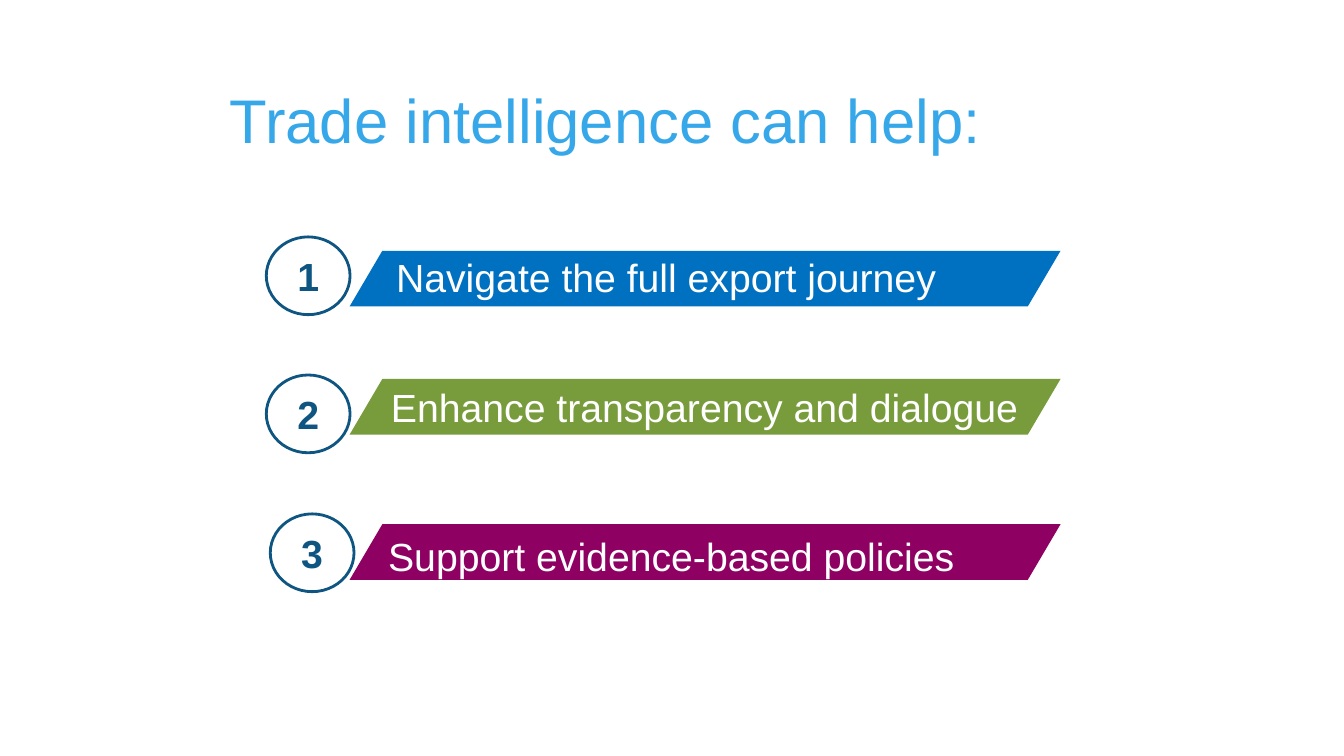
"""Build the slide listing three ways trade intelligence can help."""
from pptx import Presentation
from pptx.dml.color import RGBColor
from pptx.enum.shapes import MSO_SHAPE
from pptx.enum.text import MSO_ANCHOR, PP_ALIGN
from pptx.util import Cm, Pt

OVAL, SLANT = MSO_SHAPE.OVAL, MSO_SHAPE.PARALLELOGRAM
TOP, MIDDLE = MSO_ANCHOR.TOP, MSO_ANCHOR.MIDDLE
LEFT, CENTER = PP_ALIGN.LEFT, PP_ALIGN.CENTER
WHITE, NAVY, SKY = "FFFFFF", "0E5681", "36A7E9"


def rgb(value):
    return RGBColor.from_string(value)


class Deck:
    def __init__(self, s):
        self.s = s
        self.font = {"name": "Arial", "size": Pt(28), "bold": False}

    def put_text(self, sp, text, color, align=LEFT, anchor=TOP, **fmt):
        tf = sp.text_frame
        tf.word_wrap = True
        tf.vertical_anchor = anchor
        p = tf.paragraphs[0]
        p.alignment = align
        r = p.add_run()
        r.text = text
        for key, value in {**self.font, **fmt}.items():
            setattr(r.font, key, value)
        r.font.color.rgb = rgb(color)

    def label(self, box, text, color, **fmt):
        sp = self.s.shapes.add_textbox(*map(Cm, box))
        self.put_text(sp, text, color, **fmt)

    def bar(self, box, color):
        sp = self.s.shapes.add_shape(SLANT, *map(Cm, box))
        sp.shadow.inherit = False
        sp.adjustments[0] = 0.588
        sp.fill.solid()
        sp.fill.fore_color.rgb = rgb(color)
        sp.line.fill.background()

    def badge(self, box, number):
        sp = self.s.shapes.add_shape(OVAL, *map(Cm, box))
        sp.shadow.inherit = False
        sp.fill.background()
        sp.line.color.rgb = rgb(NAVY)
        sp.line.width = Pt(2)
        self.put_text(sp, str(number), NAVY, CENTER, MIDDLE, bold=True)


def main():
    prs = Presentation()
    prs.slide_width, prs.slide_height = Cm(33.86), Cm(19.05)
    deck = Deck(prs.slides.add_slide(prs.slide_layouts[6]))
    deck.label((5.54, 1.93, 21.89, 2.13), "Trade intelligence can help:", SKY, size=Pt(44))

    rows = [
        ("Navigate the full export journey", "0070C0", 6.32, (6.71, 5.97), (9.73, 6.27, 19.25)),
        ("Enhance transparency and dialogue", "789C3C", 9.55, (6.71, 9.45), (9.6, 9.53, 19.94)),
        ("Support evidence-based policies", "8F0063", 13.21, (6.81, 12.95), (9.53, 13.28, 17.37)),
    ]
    for number, (text, color, bar_top, badge_at, label_at) in enumerate(rows, 1):
        deck.bar((8.81, bar_top, 17.91, 1.4), color)
        deck.badge((*badge_at, 2.11, 1.96), number)
        deck.label((*label_at, 1.45), text, WHITE)

    prs.save("out.pptx")


if __name__ == "__main__":
    main()
